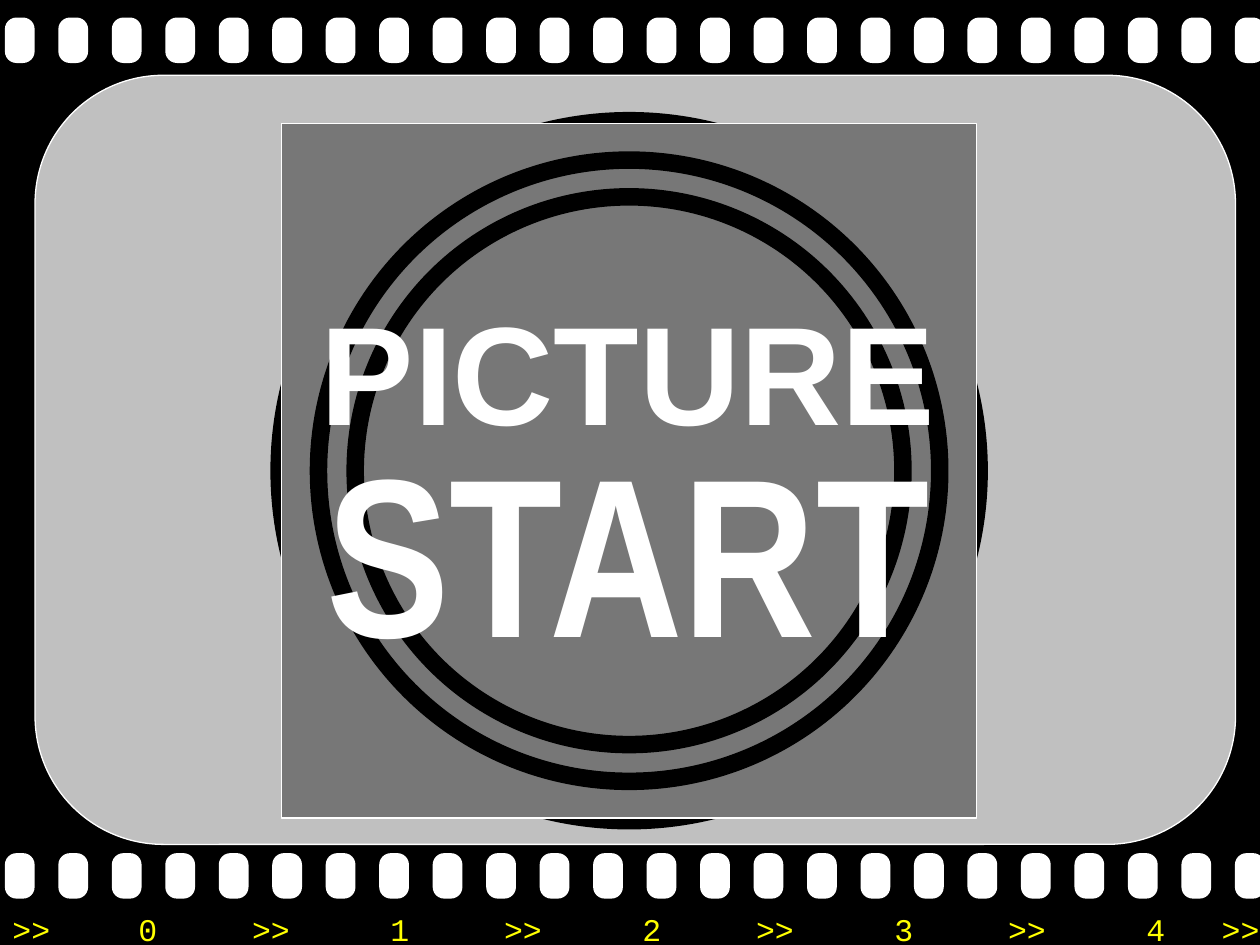
from lxml.etree import SubElement
from pptx import Presentation
from pptx.dml.color import RGBColor
from pptx.enum.shapes import MSO_SHAPE as Preset
from pptx.enum.text import MSO_ANCHOR as Anchor, PP_ALIGN as Align
from pptx.oxml.ns import qn
from pptx.util import Pt

COLORS = {"black": "000000", "white": "FFFFFF", "silver": "C0C0C0",
          "gray": "777777", "yellow": "FFFF00"}

# text, font, size, line spacing
TITLE = [("PICTURE", "Arial", 80, 1.0), ("START", "Arial Narrow", 129, 0.85)]
# mark, distance from the left text edge
FRAME_MARKS = [(">>", 0), ("0", 72), (">>", 137), ("1", 216), (">>", 281),
               ("2", 360), (">>", 425), ("3", 504), (">>", 569), ("4", 648),
               (">>", 691)]

HOLE_TOPS = (10, 487.5)
HOLE_COUNT, HOLE_LEFT, HOLE_PITCH = 24, 2.8, 30.56
HOLE_WIDTH, HOLE_HEIGHT = 17, 26

CENTER_X, CENTER_Y = 359.5, 269
OUTER_RING = 400
INNER_RINGS = (313, 355)
RING_WIDTH = 10
SQUARE = 397


def rgb(name):
    return RGBColor.from_string(COLORS[name])


def draw(shapes, preset, left, top, width, height,
         fill=None, line=None, weight=0.75, corner=None):
    shape = shapes.add_shape(preset, Pt(left), Pt(top), Pt(width), Pt(height))
    shape.shadow.inherit = False
    if corner is not None:
        shape.adjustments[0] = corner
    if fill:
        shape.fill.solid()
        shape.fill.fore_color.rgb = rgb(fill)
    else:
        shape.fill.background()
    if line:
        shape.line.color.rgb = rgb(line)
        shape.line.width = Pt(weight)
    else:
        shape.line.fill.background()


def draw_centered(preset, size, **style):
    draw(slide.shapes, preset, CENTER_X - size / 2, CENTER_Y - size / 2,
         size, size, **style)


def set_font(paragraph, name, size, color, bold=False):
    font = paragraph.font
    font.name, font.size, font.bold = name, Pt(size), bold
    font.color.rgb = rgb(color)


prs = Presentation()
prs.slide_width, prs.slide_height = Pt(720), Pt(540)
slide = prs.slides.add_slide(prs.slide_layouts[6])
slide.background.fill.solid()
slide.background.fill.fore_color.rgb = rgb("black")

# Film strip
draw(slide.shapes, Preset.ROUNDED_RECTANGLE, 20, 43, 686, 439.5,
     fill="silver", line="white", corner=0.167)
for top in HOLE_TOPS:
    perforations = slide.shapes.add_group_shape()
    for i in range(HOLE_COUNT):
        draw(perforations.shapes, Preset.ROUNDED_RECTANGLE,
             HOLE_LEFT + i * HOLE_PITCH, top, HOLE_WIDTH, HOLE_HEIGHT,
             fill="white", corner=0.39)

# Frame numbers, placed by tab stops
numbers = slide.shapes.add_textbox(Pt(0), Pt(516.5), Pt(734), Pt(29))
numbers.text_frame.word_wrap = True
number_line = numbers.text_frame.paragraphs[0]
number_line.text = "\t".join(mark for mark, _ in FRAME_MARKS)
set_font(number_line, "Courier New", 18, "yellow")
tabs = SubElement(number_line._p.get_or_add_pPr(), qn("a:tabLst"))
number_line._p.pPr.insert(0, tabs)
for _, stop in FRAME_MARKS[1:]:
    SubElement(tabs, qn("a:tab"), pos=str(Pt(stop)), algn="l")

# Countdown target
draw_centered(Preset.OVAL, OUTER_RING, line="black", weight=RING_WIDTH)
draw_centered(Preset.RECTANGLE, SQUARE, fill="gray", line="white")
for ring in INNER_RINGS:
    draw_centered(Preset.OVAL, ring, line="black", weight=RING_WIDTH)

# Title
title = slide.shapes.add_textbox(Pt(160), Pt(142), Pt(398), Pt(270)).text_frame
title.word_wrap = False
title.vertical_anchor = Anchor.MIDDLE
title.margin_left = title.margin_right = title.margin_top = title.margin_bottom = 0
for i, (words, font_name, size, spacing) in enumerate(TITLE):
    paragraph = title.add_paragraph() if i else title.paragraphs[0]
    paragraph.text = words
    paragraph.alignment = Align.CENTER
    paragraph.line_spacing = spacing
    set_font(paragraph, font_name, size, "white", bold=True)

prs.save("out.pptx")
